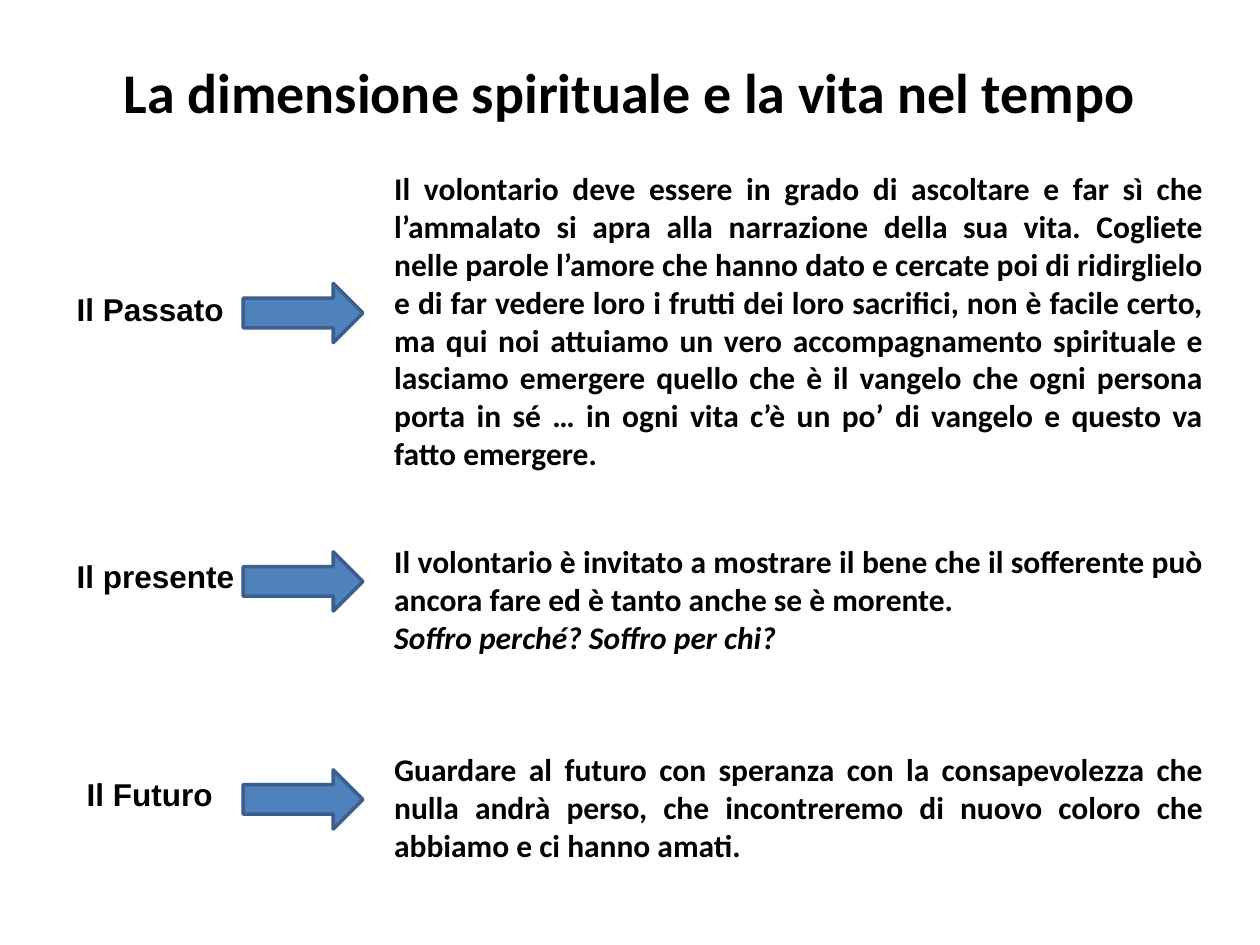
from dataclasses import dataclass

from pptx import Presentation
from pptx.dml.color import RGBColor
from pptx.enum import shapes, text
from pptx.util import Inches, Pt


@dataclass(frozen=True)
class Theme:
    ink: RGBColor = RGBColor(0x00, 0x00, 0x00)
    arrow_fill: RGBColor = RGBColor(0x4F, 0x81, 0xBD)
    arrow_line: RGBColor = RGBColor(0x3A, 0x5F, 0x8C)
    arrow_line_width: float = 2
    body_font: str = "Calibri"
    label_font: str = "Arial"
    title_size: float = 32
    body_size: float = 18


@dataclass(frozen=True)
class Period:
    label: str
    label_left: float
    label_width: float
    label_top: float
    arrow_top: float
    body_top: float
    body_height: float
    body: str
    question: str = ""


THEME = Theme()
ARROW_LEFT, ARROW_WIDTH, ARROW_HEIGHT = 1.93, 0.95, 0.47
BODY_LEFT, BODY_WIDTH = 3.03, 6.62
LABEL_HEIGHT = 0.4

PERIODS = [
    Period(
        "Il Passato", 0.51, 1.81, 2.25, 2.25, 1.26, 2.57,
        "Il volontario deve essere in grado di ascoltare e far sì che "
        "l’ammalato si apra alla narrazione della sua vita. Cogliete nelle "
        "parole l’amore che hanno dato e cercate poi di ridirglielo e di far "
        "vedere loro i frutti dei loro sacrifici, non è facile certo, ma qui "
        "noi attuiamo un vero accompagnamento spirituale e lasciamo emergere "
        "quello che è il vangelo che ogni persona porta in sé … in ogni vita "
        "c’è un po’ di vangelo e questo va fatto emergere.",
    ),
    Period(
        "Il presente", 0.51, 1.57, 4.37, 4.38, 4.25, 1.01,
        "Il volontario è invitato a mostrare il bene che il sofferente può "
        "ancora fare ed è tanto anche se è morente.",
        "Soffro perché? Soffro per chi?",
    ),
    Period(
        "Il Futuro", 0.59, 1.34, 6.1, 6.11, 5.9, 1.01,
        "Guardare al futuro con speranza con la consapevolezza che nulla "
        "andrà perso, che incontreremo di nuovo coloro che abbiamo e ci "
        "hanno amati.",
    ),
]


def write(para, words: str, *, font: str, size: float,
          align=text.PP_ALIGN.LEFT, italic: bool = False) -> None:
    """Add bold theme-coloured words to a paragraph."""
    para.alignment = align
    span = para.add_run()
    span.text = words
    span.font.name = font
    span.font.size = Pt(size)
    span.font.bold = True
    span.font.italic = italic
    span.font.color.rgb = THEME.ink


def add_frame(page, left: float, top: float, width: float, height: float,
              anchor=text.MSO_ANCHOR.MIDDLE):
    """Add an empty wrapping text box and return its text frame."""
    box = page.shapes.add_textbox(
        Inches(left), Inches(top), Inches(width), Inches(height))
    frame = box.text_frame
    frame.word_wrap = True
    frame.vertical_anchor = anchor
    return frame


def add_arrow(page, top: float) -> None:
    arrow = page.shapes.add_shape(
        shapes.MSO_SHAPE.RIGHT_ARROW, Inches(ARROW_LEFT), Inches(top),
        Inches(ARROW_WIDTH), Inches(ARROW_HEIGHT))
    arrow.shadow.inherit = False
    arrow.fill.solid()
    arrow.fill.fore_color.rgb = THEME.arrow_fill
    arrow.line.color.rgb = THEME.arrow_line
    arrow.line.width = Pt(THEME.arrow_line_width)


def add_period(page, period: Period) -> None:
    """Draw one row: label, arrow and justified description."""
    label = add_frame(page, period.label_left, period.label_top,
                      period.label_width, LABEL_HEIGHT, text.MSO_ANCHOR.TOP)
    write(label.paragraphs[0], period.label,
          font=THEME.label_font, size=THEME.body_size)

    add_arrow(page, period.arrow_top)

    body = add_frame(page, BODY_LEFT, period.body_top,
                     BODY_WIDTH, period.body_height)
    style = dict(font=THEME.body_font, size=THEME.body_size,
                 align=text.PP_ALIGN.JUSTIFY)
    write(body.paragraphs[0], period.body, **style)
    if period.question:
        write(body.add_paragraph(), period.question, italic=True, **style)


def main() -> None:
    deck = Presentation()
    deck.slide_width, deck.slide_height = Inches(10), Inches(7.5)
    page = deck.slides.add_slide(deck.slide_layouts[6])

    # Title
    title = add_frame(page, 0.5, 0.3, 9, 0.85)
    write(title.paragraphs[0], "La dimensione spirituale e la vita nel tempo",
          font=THEME.body_font, size=THEME.title_size,
          align=text.PP_ALIGN.CENTER)

    # Past, present and future
    for period in PERIODS:
        add_period(page, period)

    deck.save("out.pptx")


if __name__ == "__main__":
    main()
